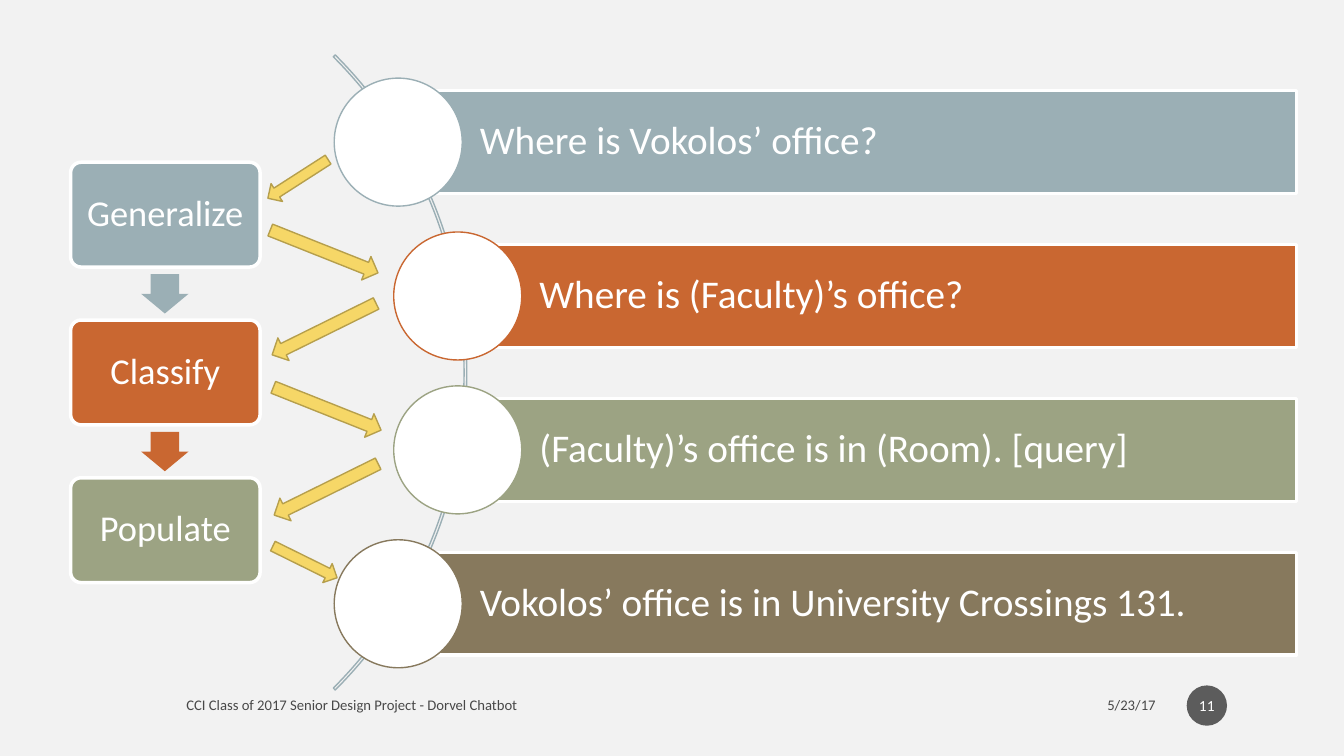
from dataclasses import dataclass

from lxml.etree import SubElement
from pptx import Presentation
from pptx.dml.color import RGBColor
from pptx.dml.fill import FillFormat
from pptx.enum.shapes import MSO_SHAPE
from pptx.enum.text import MSO_ANCHOR, PP_ALIGN
from pptx.oxml.ns import qn
from pptx.shapes.autoshape import Shape
from pptx.slide import Slide
from pptx.util import Inches, Pt

COLORS = {
    "background": "F2F2F2", "white": "FFFFFF", "black": "000000",
    "blue": "9BAFB5", "orange": "C96731", "green": "9CA383", "brown": "87795D",
    "yellow": "F6D767", "gold": "B69F4C", "badge": "1D1D1D",
}
FONT = "Calibri"
BAR_TOP, BAR_PITCH, BAR_HEIGHT, BAR_RIGHT = 0.9, (5.48 - 0.9) / 3, 1.02, 12.86
CIRCLE = 1.27
STEP_LEFT, STEP_TOP, STEP_PITCH = 0.7, 1.61, (4.74 - 1.61) / 2
STEP_WIDTH, STEP_HEIGHT = 1.88, 1.04


@dataclass(frozen=True)
class Box:
    left: float
    top: float
    width: float
    height: float


@dataclass(frozen=True)
class Message:
    text: str
    color: str
    left: float


@dataclass(frozen=True)
class Step:
    text: str
    color: str


@dataclass(frozen=True)
class FlowArrow:
    box: Box
    rotation: float


@dataclass(frozen=True)
class TextStyle:
    size: float
    color: str = "white"
    align: PP_ALIGN = PP_ALIGN.LEFT
    insets: tuple[float, float, float, float] = (0.1, 0.05, 0.1, 0.05)
    line_spacing: float = 1.0
    opacity: int = 100


MESSAGES = [
    Message("Where is Vokolos’ office?", "blue", 3.95),
    Message("Where is (Faculty)’s office?", "orange", 4.54),
    Message("(Faculty)’s office is in (Room). [query]", "green", 4.54),
    Message("Vokolos’ office is in University Crossings 131.", "brown", 3.95),
]
STEPS = [Step("Generalize", "blue"), Step("Classify", "orange"), Step("Populate", "green")]
FLOW_ARROWS = [
    FlowArrow(Box(2.6, 1.67, 0.71, 0.21), 147.3),
    FlowArrow(Box(2.64, 2.37, 1.15, 0.25), 21.7),
    FlowArrow(Box(2.64, 3.14, 1.15, 0.25), 153.7),
    FlowArrow(Box(2.67, 3.93, 1.15, 0.25), 21.7),
    FlowArrow(Box(2.66, 4.73, 1.15, 0.25), 153.7),
    FlowArrow(Box(2.67, 5.47, 0.71, 0.21), 26.3),
]
MESSAGE_STYLE = TextStyle(28, insets=(0.81, 0.08, 0.08, 0.08), line_spacing=0.9)
STEP_STYLE = TextStyle(26, align=PP_ALIGN.CENTER, insets=(0.05,) * 4, line_spacing=0.9)
FOOTER_STYLE = TextStyle(10.5, "black", opacity=70)
DATE_STYLE = TextStyle(10.5, "black", PP_ALIGN.RIGHT, opacity=70)
NUMBER_STYLE = TextStyle(11, align=PP_ALIGN.CENTER, insets=(0.02, 0.05, 0.02, 0.05))


def paint(fill: FillFormat, color: str, opacity: int = 100) -> None:
    fill.solid()
    fill.fore_color.rgb = RGBColor.from_string(COLORS[color])
    if opacity < 100:
        tint = fill._xPr.find(qn("a:solidFill"))[0]
        SubElement(tint, qn("a:alpha")).set("val", str(opacity * 1000))


def add_figure(slide: Slide, kind: MSO_SHAPE, box: Box, fill: str | None = None,
               line: str | None = None, line_width: float = 1, rotation: float = 0,
               adjustments: tuple[float, ...] = (), opacity: int = 100) -> Shape:
    shape = slide.shapes.add_shape(kind, Inches(box.left), Inches(box.top),
                                   Inches(box.width), Inches(box.height))
    shape.shadow.inherit = False
    shape.rotation = rotation
    for index, value in enumerate(adjustments):
        shape.adjustments[index] = value
    if fill:
        paint(shape.fill, fill, opacity)
    else:
        shape.fill.background()
    if line:
        paint(shape.line.fill, line)
        shape.line.width = Pt(line_width)
    else:
        shape.line.fill.background()
    return shape


def write_text(shape: Shape, text: str, style: TextStyle) -> None:
    frame = shape.text_frame
    frame.word_wrap = True
    frame.vertical_anchor = MSO_ANCHOR.MIDDLE
    (frame.margin_left, frame.margin_top,
     frame.margin_right, frame.margin_bottom) = map(Inches, style.insets)
    paragraph = frame.paragraphs[0]
    paragraph.alignment = style.align
    paragraph.line_spacing = style.line_spacing
    run = paragraph.add_run()
    run.text = text
    run.font.name = FONT
    run.font.size = Pt(style.size)
    paint(run.font.fill, style.color, style.opacity)


def add_label(slide: Slide, box: Box, text: str, style: TextStyle) -> None:
    shape = slide.shapes.add_textbox(Inches(box.left), Inches(box.top),
                                     Inches(box.width), Inches(box.height))
    write_text(shape, text, style)


def add_message(slide: Slide, index: int, message: Message) -> None:
    top = BAR_TOP + index * BAR_PITCH
    bar = add_figure(slide, MSO_SHAPE.RECTANGLE,
                     Box(message.left, top, BAR_RIGHT - message.left, BAR_HEIGHT),
                     message.color, "white", 2.5)
    write_text(bar, message.text, MESSAGE_STYLE)
    add_figure(slide, MSO_SHAPE.OVAL,
               Box(message.left - CIRCLE / 2, top + (BAR_HEIGHT - CIRCLE) / 2, CIRCLE, CIRCLE),
               "white", message.color)


def add_step(slide: Slide, index: int, step: Step) -> None:
    top = STEP_TOP + index * STEP_PITCH
    card = add_figure(slide, MSO_SHAPE.ROUNDED_RECTANGLE,
                      Box(STEP_LEFT, top, STEP_WIDTH, STEP_HEIGHT),
                      step.color, "white", 2.5, adjustments=(0.1,))
    write_text(card, step.text, STEP_STYLE)
    if index < len(STEPS) - 1:
        add_figure(slide, MSO_SHAPE.RIGHT_ARROW, Box(1.44, top + 1.07, 0.39, 0.47),
                   step.color, rotation=90, adjustments=(0.6, 0.5))


def main() -> None:
    """Build the chatbot question flow slide and save it."""
    presentation = Presentation()
    presentation.slide_width, presentation.slide_height = Inches(13.33), Inches(7.5)
    slide = presentation.slides.add_slide(presentation.slide_layouts[6])
    paint(slide.background.fill, "background")

    add_figure(slide, MSO_SHAPE.BLOCK_ARC, Box(-4.28, -0.76, 8.91, 8.91),
               line="blue", adjustments=(189, 27, 0.003))
    for index, message in enumerate(MESSAGES):
        add_message(slide, index, message)
    for index, step in enumerate(STEPS):
        add_step(slide, index, step)
    for arrow in FLOW_ARROWS:
        add_figure(slide, MSO_SHAPE.RIGHT_ARROW, arrow.box, "yellow", "gold",
                   rotation=arrow.rotation)

    add_label(slide, Box(8.55, 6.82, 3.01, 0.35), "5/23/17", DATE_STYLE)
    add_label(slide, Box(1.75, 6.82, 6.45, 0.35),
              "CCI Class of 2017 Senior Design Project - Dorvel Chatbot", FOOTER_STYLE)
    badge = add_figure(slide, MSO_SHAPE.OVAL, Box(11.77, 6.8, 0.4, 0.4), "badge", opacity=70)
    write_text(badge, "11", NUMBER_STYLE)
    presentation.save("out.pptx")


if __name__ == "__main__":
    main()
